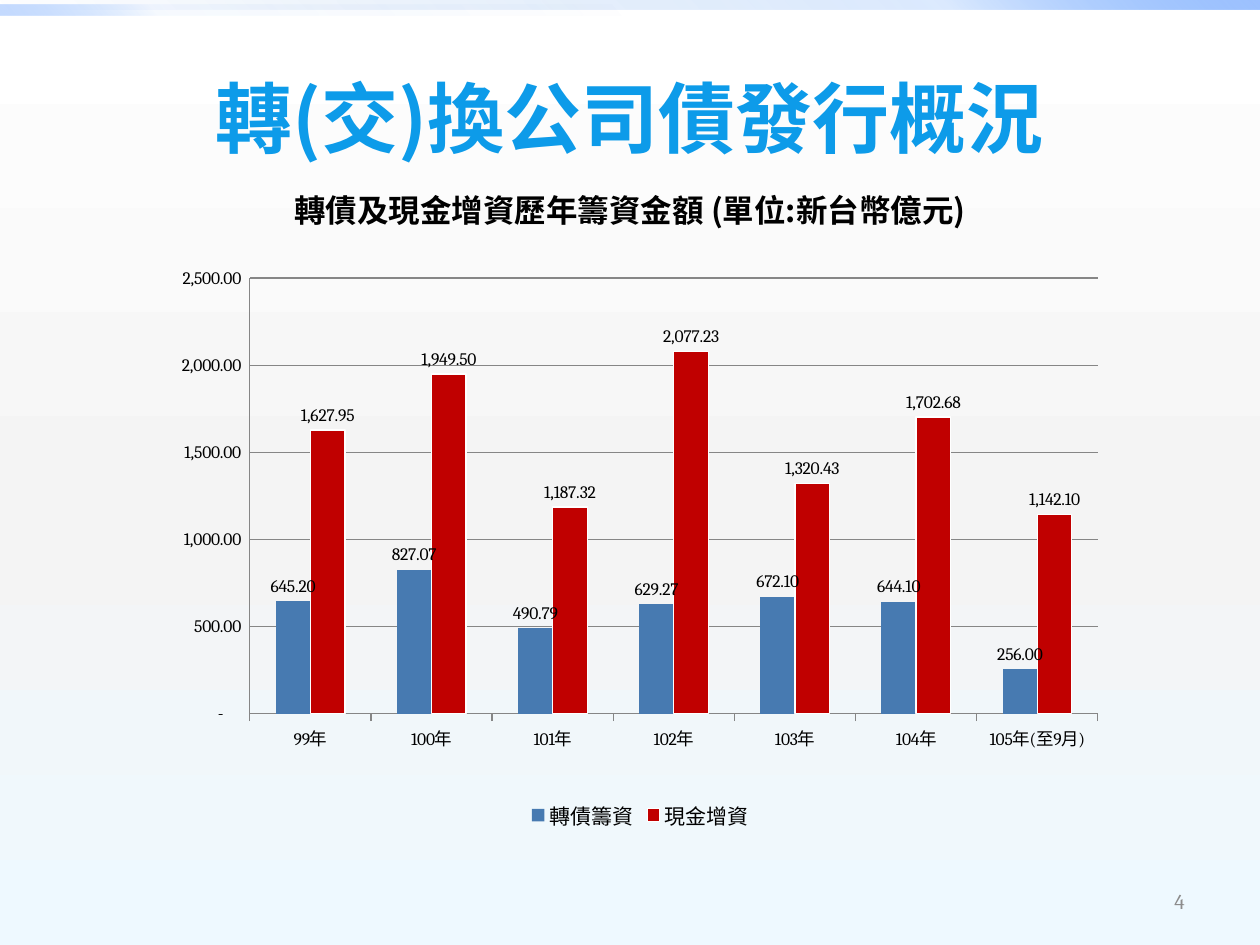
from lxml import etree
from pptx import Presentation
from pptx.chart.data import CategoryChartData
from pptx.dml.color import RGBColor
from pptx.enum.chart import XL_CHART_TYPE, XL_LABEL_POSITION, XL_LEGEND_POSITION, XL_TICK_MARK
from pptx.enum.shapes import MSO_SHAPE
from pptx.enum.text import MSO_ANCHOR, PP_ALIGN
from pptx.oxml import parse_xml
from pptx.oxml.ns import nsdecls, qn
from pptx.util import Pt

COLUMN = XL_CHART_TYPE.COLUMN_CLUSTERED
OUTER = XL_LABEL_POSITION.OUTSIDE_END
BOTTOM = XL_LEGEND_POSITION.BOTTOM
OUT, NONE = XL_TICK_MARK.OUTSIDE, XL_TICK_MARK.NONE
RECT = MSO_SHAPE.RECTANGLE
TOP, MIDDLE = MSO_ANCHOR.TOP, MSO_ANCHOR.MIDDLE
CENTER, RIGHT = PP_ALIGN.CENTER, PP_ALIGN.RIGHT

SCALE = 914400 / 126
LATIN, HAN = "Cambria", "Noto Sans CJK SC"
MONEY = r'_(* #,##0.00_);_(* \(#,##0.00\);_(* "-"??_);_(@_)'
COLORS = {
    "title": "0D9BE9", "text": "000000", "page": "8C8C8C", "grid": "868686",
    "bond": "477AB1", "cash": "C00000", "edge": "FFFFFF",
    "deep": "0058B7", "mid": "4F95FF", "pale": "9EC2FF",
    "white": "FFFFFF", "gray": "F4F4F4", "ice": "EEF9FF",
}
YEARS = ["99年", "100年", "101年", "102年", "103年", "104年", "105年(至9月)"]
FUNDS = [
    ("轉債籌資", "bond", None, [645.2, 827.07, 490.79, 629.27, 672.1, 644.1, 256]),
    ("現金增資", "cash", "edge", [1627.95, 1949.5, 1187.32, 2077.23, 1320.43, 1702.68, 1142.1]),
]


def px(*sizes):
    """Turn pixel lengths into EMU."""
    return [round(size * SCALE) for size in sizes]


def tint(name):
    """Look up a colour by name."""
    return RGBColor.from_string(COLORS[name])


def style(font, size, color="text", face=LATIN, bold=False):
    """Set the look of a font."""
    font.size, font.bold, font.name = Pt(size), bold, face
    font.color.rgb = tint(color)


def blend(root, fill, stops, angle):
    """Give a fill a linear gradient of (place, colour, opacity) stops."""
    fill.solid()
    marks = "".join(
        f'<a:gs pos="{place * 1000}"><a:srgbClr val="{COLORS[name]}">'
        f'<a:alpha val="{alpha * 1000}"/></a:srgbClr></a:gs>'
        for place, name, alpha in stops)
    grad = parse_xml(
        f'<a:gradFill {nsdecls("a")} rotWithShape="1"><a:gsLst>{marks}</a:gsLst>'
        f'<a:lin ang="{angle * 60000}" scaled="0"/></a:gradFill>')
    old = root.find(".//" + qn("a:solidFill"))
    old.getparent().replace(old, grad)


def frame(chart, **sides):
    """Fix the inner plot area as shares of the chart."""
    plot = chart.element.find(".//" + qn("c:plotArea"))
    for old in plot.findall(qn("c:layout")):
        plot.remove(old)
    layout = etree.Element(qn("c:layout"))
    box = etree.SubElement(layout, qn("c:manualLayout"))
    modes = {"layoutTarget": "inner", "xMode": "edge", "yMode": "edge"}
    for tag, value in {**modes, **sides}.items():
        etree.SubElement(box, qn("c:" + tag)).set("val", str(value))
    plot.insert(0, layout)


class Deck:
    """Hold the style and the current slide."""

    def __init__(self, wide, high):
        self.show = Presentation()
        self.show.slide_width, self.show.slide_height = px(wide, high)
        self.slide = self.show.slides.add_slide(self.show.slide_layouts[6])

    def back(self, stops, angle):
        """Paint the background."""
        blend(self.slide.element, self.slide.background.fill, stops, angle)

    def band(self, box, stops, angle):
        """Add a gradient band."""
        shape = self.slide.shapes.add_shape(RECT, *px(*box))
        shape.shadow.inherit = False
        shape.line.fill.background()
        blend(shape.element, shape.fill, stops, angle)

    def text(self, box, words, align=CENTER, anchor=MIDDLE, **look):
        """Add a wrapped line of text."""
        body = self.slide.shapes.add_textbox(*px(*box)).text_frame
        body.word_wrap, body.vertical_anchor = True, anchor
        line = body.paragraphs[0]
        line.alignment = align
        run = line.add_run()
        run.text = words
        style(run.font, **look)
        east = etree.SubElement(run.font._element, qn("a:ea"))
        east.set("typeface", HAN)

    def chart(self, box, cats, rows):
        """Add a clustered column chart."""
        data = CategoryChartData(number_format=MONEY)
        data.categories = cats
        for name, _, _, values in rows:
            data.add_series(name, values)
        chart = self.slide.shapes.add_chart(COLUMN, *px(*box), data).chart
        style(chart.font, 10)
        chart.has_title = False
        frame(chart, x=0.09, y=0.04, w=0.89, h=0.75)
        chart.has_legend = True
        chart.legend.position, chart.legend.include_in_layout = BOTTOM, False
        style(chart.legend.font, 12)
        self.axes(chart)
        plot = chart.plots[0]
        plot.gap_width, plot.overlap, plot.vary_by_categories = 150, 0, False
        for series, (_, color, edge, _) in zip(plot.series, rows):
            self.bars(series, color, edge)

    def axes(self, chart):
        """Set the scale, ticks and grid."""
        cat, val = chart.category_axis, chart.value_axis
        cat.major_tick_mark, val.major_tick_mark = OUT, NONE
        val.minimum_scale, val.maximum_scale, val.major_unit = 0, 2500, 500
        val.has_major_gridlines = True
        val.tick_labels.number_format = MONEY
        val.tick_labels.number_format_is_linked = False
        for part in (cat, val, val.major_gridlines):
            part.format.line.color.rgb = tint("grid")
            part.format.line.width = Pt(0.75)

    def bars(self, series, color, edge):
        """Colour a series and label its values."""
        series.format.fill.solid()
        series.format.fill.fore_color.rgb = tint(color)
        series.invert_if_negative = False
        if edge:
            series.format.line.color.rgb = tint(edge)
            series.format.line.width = Pt(0.75)
        labels = series.data_labels
        labels.show_value, labels.position = True, OUTER
        labels.number_format, labels.number_format_is_linked = MONEY, False
        style(labels.font, 10)


def main():
    """Build the slide."""
    deck = Deck(1260, 945)
    deck.back([(0, "white", 100), (55, "gray", 100), (100, "ice", 100)], 90)
    deck.band((0, 0, 1260, 10), [(0, "deep", 0), (75, "mid", 20), (100, "pale", 100)], 315)
    deck.band((0, 5, 630, 10), [(0, "deep", 0), (75, "mid", 5), (100, "pale", 60)], 135)
    deck.text((63, 38, 1134, 157), "轉(交)換公司債發行概況",
              size=44, color="title", face=HAN, bold=True)
    deck.text((903, 876, 294, 50), "4", align=RIGHT, size=12, color="page")
    deck.chart((164, 255, 953, 581), YEARS, FUNDS)
    deck.text((267, 185, 726, 50), "轉債及現金增資歷年籌資金額 (單位:新台幣億元)",
              anchor=TOP, size=18, face=HAN, bold=True)
    deck.show.save("out.pptx")


if __name__ == "__main__":
    main()
